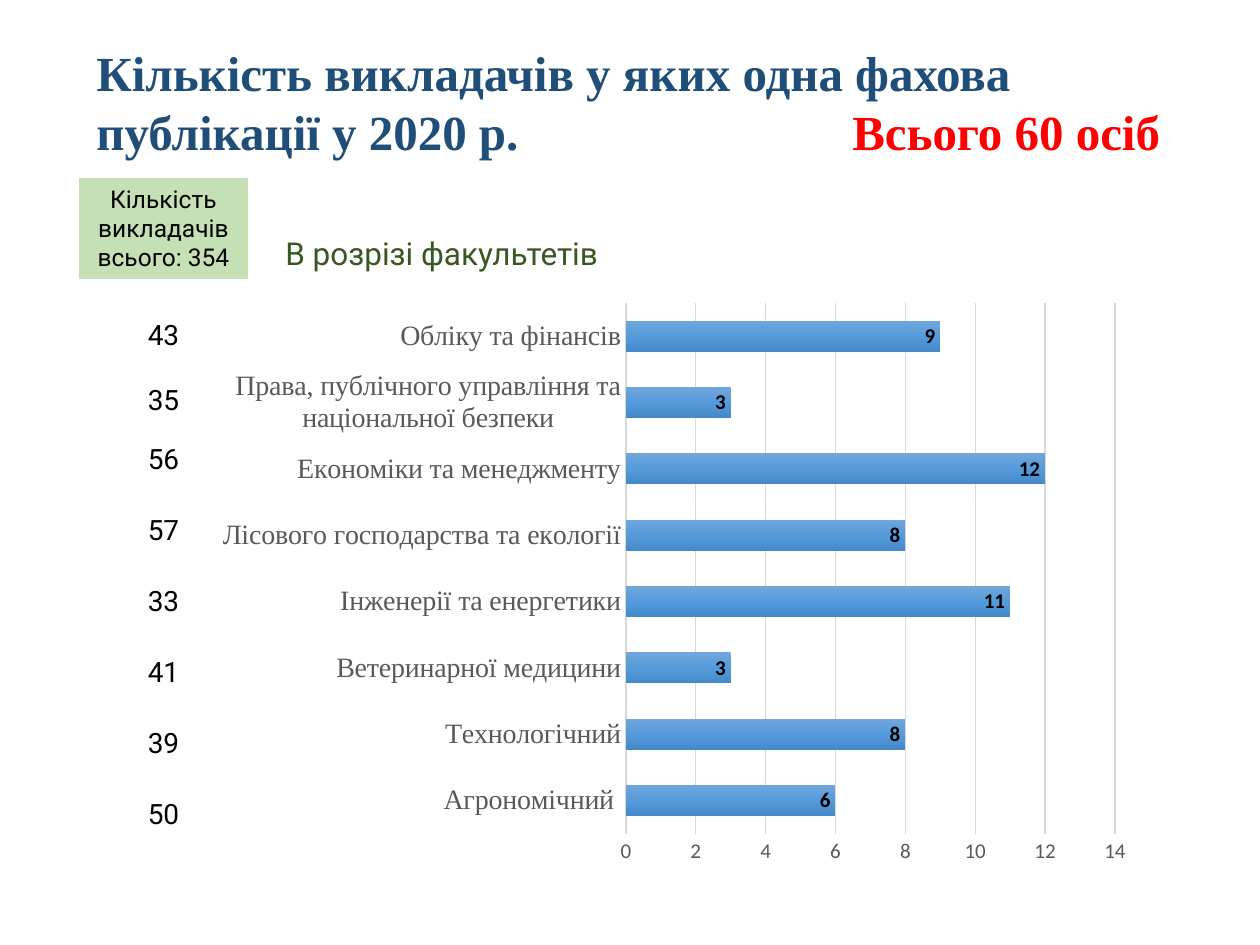
from copy import deepcopy

from pptx import Presentation
from pptx import util as u
from pptx.chart.data import CategoryChartData
from pptx.dml.color import RGBColor
from pptx.enum import chart as ch
from pptx.enum import text
from pptx.oxml import parse_xml
from pptx.oxml.ns import nsdecls, qn

EMU_PER_PX = 914400 / 126
GREY, GRID = "595959", "D9D9D9"
CHART_BOX = (184, 275, 956, 601)
PLOT_BOX = (442, 28, 489, 531)  # within the chart
FACULTIES = {
    "Агрономічний ": 6,
    "Технологічний": 8,
    "Ветеринарної медицини": 3,
    "Інженерії та енергетики": 11,
    "Лісового господарства та екології": 8,
    "Економіки та менеджменту": 12,
    "Права, публічного управління та національної безпеки": 3,
    "Обліку та фінансів": 9,
}
STAFF_ROWS = [(101, ["Кількість викладачів", "всього: 354"]), (145, ["43", "35"])]
STAFF_ROWS += [(71, [count]) for count in ("56", "57", "33", "41", "39", "50")]


def px(*lengths):
    return [u.Emu(round(length * EMU_PER_PX)) for length in lengths]


def color(value):
    return RGBColor.from_string(value)


def set_font(font, size, name, fill, **options):
    for key, value in dict(size=u.Pt(size), name=name, **options).items():
        setattr(font, key, value)
    font.color.rgb = color(fill)


def add_text(slide, box, runs, wrap=True, tab=None):
    """Write runs of (text, font arguments) as one paragraph; tab is a stop in px."""
    frame = slide.shapes.add_textbox(*px(*box)).text_frame
    frame.word_wrap = wrap
    paragraph = frame.paragraphs[0]
    if tab:
        position = px(tab)[0]
        paragraph._p.get_or_add_pPr().append(parse_xml(
            f'<a:tabLst {nsdecls("a")}><a:tab pos="{position}" algn="l"/></a:tabLst>'))
    for content, font in runs:
        run = paragraph.add_run()
        run.text = content
        set_font(run.font, **font)


def remove_borders(cell):
    properties = cell._tc.get_or_add_tcPr()
    for index, side in enumerate("LRTB"):
        properties.insert(index, parse_xml(
            f'<a:ln{side} {nsdecls("a")} w="0"><a:noFill/></a:ln{side}>'))


def add_staff_table(slide):
    heights = [height for height, _ in STAFF_ROWS]
    table = slide.shapes.add_table(
        len(heights), 1, *px(79, 178, 169, sum(heights))).table
    table.first_row = table.horz_banding = False
    for index, (height, lines) in enumerate(STAFF_ROWS):
        table.rows[index].height = px(height)[0]
        cell = table.cell(index, 0)
        heading = index == 0
        if heading:
            cell.fill.solid()
            cell.fill.fore_color.rgb = color("C5E0B4")
        else:
            cell.fill.background()
        remove_borders(cell)
        several = len(lines) > 1
        cell.vertical_anchor = (
            text.MSO_ANCHOR.BOTTOM if several else text.MSO_ANCHOR.MIDDLE)
        frame = cell.text_frame
        frame.text = "\n".join(lines)
        for paragraph in frame.paragraphs:
            paragraph.alignment = text.PP_ALIGN.CENTER
            set_font(paragraph.font, 14 if heading else 16, "Roboto", "000000")
        if several and not heading:
            frame.paragraphs[1].space_before = u.Pt(19)


def set_gradient(fill, stops):
    fill.gradient()
    fill.gradient_angle = 270
    first = fill.gradient_stops[0]._gs
    for _ in range(len(stops) - len(fill.gradient_stops)):
        first.addnext(deepcopy(first))
    for stop, (position, value) in zip(fill.gradient_stops, stops):
        stop.position = position
        stop.color.rgb = color(value)


def set_plot_area(chart):
    """Fix the inner plot area, in fractions of the chart."""
    area = chart._chartSpace.chart.plotArea
    for old in area.findall(qn("c:layout")):
        area.remove(old)
    values = "".join(
        f'<c:{key} val="{length / whole}"/>'
        for key, length, whole in zip("xywh", PLOT_BOX, CHART_BOX[2:] * 2))
    area.insert(0, parse_xml(
        f'<c:layout {nsdecls("c")}><c:manualLayout><c:layoutTarget val="inner"/>'
        f'<c:xMode val="edge"/><c:yMode val="edge"/>{values}'
        '</c:manualLayout></c:layout>'))


def set_line(line, width):
    line.color.rgb = color(GRID)
    line.width = u.Pt(width)


def add_faculty_chart(slide):
    data = CategoryChartData()
    data.categories = list(FACULTIES)
    data.add_series("Series 1", list(FACULTIES.values()))
    chart = slide.shapes.add_chart(
        ch.XL_CHART_TYPE.BAR_CLUSTERED, *px(*CHART_BOX), data).chart
    chart.has_legend = chart.has_title = False
    set_font(chart.font, 10, "Calibri", "000000")
    set_plot_area(chart)

    categories, values = chart.category_axis, chart.value_axis
    for axis, size, name in (
            (categories, 16, "Times New Roman"), (values, 12, "Calibri")):
        axis.major_tick_mark = axis.minor_tick_mark = ch.XL_TICK_MARK.NONE
        set_font(axis.tick_labels.font, size, name, GREY)
    set_line(categories.format.line, 1)
    values.format.line.fill.background()
    set_line(values.major_gridlines.format.line, 0.75)
    for key, value in dict(minimum_scale=0, maximum_scale=14, major_unit=2).items():
        setattr(values, key, value)

    plot = chart.plots[0]
    plot.gap_width = 115
    plot.vary_by_categories = False
    series = plot.series[0]
    set_gradient(series.format.fill, [(0, "71A6DB"), (0.5, "559BDB"), (1, "448ACA")])
    labels = series.data_labels
    labels.show_value = True
    labels.position = ch.XL_LABEL_POSITION.INSIDE_END
    set_font(labels.font, 12, "Calibri", "000000", bold=True)


def main():
    presentation = Presentation()
    presentation.slide_width, presentation.slide_height = px(1260, 945)
    slide = presentation.slides.add_slide(presentation.slide_layouts[6])
    add_faculty_chart(slide)
    title = dict(size=28, name="Times New Roman", bold=True)
    add_text(slide, (84, 36, 1121, 190), [
        ("Кількість викладачів у яких одна фахова публікації у 2020 р.\t",
         dict(title, fill="1F4E79")),
        ("Всього 60 осіб", dict(title, fill="FF0000")),
    ], tab=756)
    add_text(slide, (273, 228, 354, 50), [
        ("В розрізі факультетів", dict(size=18, name="Roboto", fill="385723")),
    ], wrap=False)
    add_staff_table(slide)
    presentation.save("out.pptx")


if __name__ == "__main__":
    main()
